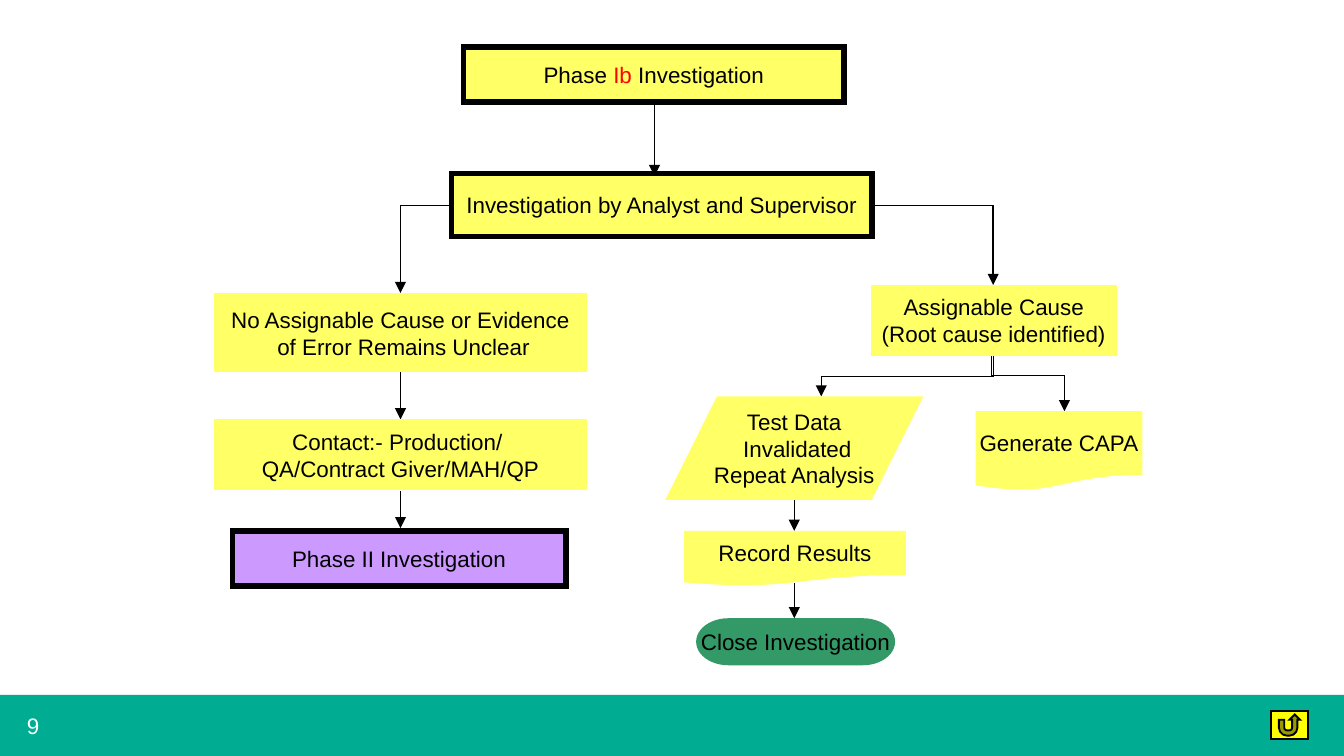
from pptx import Presentation
from pptx.dml.color import RGBColor
from pptx.enum import shapes, text
from pptx.oxml.ns import qn
from pptx.util import Inches, Pt
from lxml import etree

SLIDE_WIDTH = 10
SLIDE_HEIGHT = SLIDE_WIDTH * 9 / 16
FOOTER_TOP = 5.17
FOOTER_HEIGHT = SLIDE_HEIGHT - FOOTER_TOP

YELLOW, PURPLE, GREEN, TEAL = "FFFF66", "CC99FF", "339966", "00AD93"
BLACK, WHITE, RED = "000000", "FFFFFF", "FF0000"
KIND = shapes.MSO_SHAPE
PROCESS, DOCUMENT = KIND.FLOWCHART_PROCESS, KIND.FLOWCHART_DOCUMENT

LEFT_X, TOP_X, TEST_X, CAUSE_X, CAPA_X = 2.98, 4.87, 5.91, 7.39, 7.92
FRAME = {"vertical_anchor": text.MSO_ANCHOR.MIDDLE, "word_wrap": False}
FONT = {"name": "Arial", "size": Pt(12)}

# kind, (left, top, width, height), fill, border width, lines of (text, colour) runs
STEPS = [
    (PROCESS, (3.45, 0.35, 2.83, 0.41), YELLOW, 3,
     [[("Phase ", BLACK), ("Ib", RED), (" Investigation", BLACK)]]),
    (PROCESS, (3.36, 1.29, 3.13, 0.47), YELLOW, 3,
     ["Investigation by Analyst and Supervisor"]),
    (PROCESS, (1.59, 2.18, 2.78, 0.59), YELLOW, 0,
     ["No Assignable Cause or Evidence", " of Error Remains Unclear"]),
    (PROCESS, (1.59, 3.12, 2.78, 0.53), YELLOW, 0,
     ["Contact:- Production/ ", "QA/Contract Giver/MAH/QP"]),
    (PROCESS, (1.73, 3.95, 2.48, 0.41), PURPLE, 3, ["Phase II Investigation"]),
    (PROCESS, (6.48, 2.12, 1.83, 0.53), YELLOW, 0,
     ["Assignable Cause", "(Root cause identified)"]),
    (KIND.FLOWCHART_DATA, (4.95, 2.95, 1.92, 0.77), YELLOW, 0,
     ["Test Data", " Invalidated", "Repeat Analysis"]),
    (DOCUMENT, (7.26, 3.06, 1.24, 0.59), YELLOW, 0, ["Generate CAPA"]),
    (DOCUMENT, (5.09, 3.95, 1.65, 0.41), YELLOW, 0, ["Record Results"]),
    (KIND.FLOWCHART_TERMINATOR, (5.18, 4.6, 1.48, 0.35), GREEN, 0,
     ["Close Investigation"]),
]

# x, top, bottom
STRAIGHT_ARROWS = [
    (TOP_X, 0.78, 1.31), (LEFT_X, 2.77, 3.12), (LEFT_X, 3.65, 3.93),
    (TEST_X, 3.71, 3.95), (TEST_X, 4.34, 4.6),
]


def rgb(value):
    return RGBColor.from_string(value)


def apply(target, values):
    for name, value in values.items():
        setattr(target, name, value)


def write(frame, lines, align, color=BLACK):
    """Fill a text frame; a line is a string or a list of (text, colour) runs."""
    apply(frame, FRAME)
    for index, line in enumerate(lines):
        paragraph = frame.paragraphs[0] if index == 0 else frame.add_paragraph()
        paragraph.alignment = align
        for words, run_color in [(line, color)] if isinstance(line, str) else line:
            run = paragraph.add_run()
            run.text = words
            apply(run.font, FONT)
            run.font.color.rgb = rgb(run_color)


def draw_line(line, width):
    line.color.rgb = rgb(BLACK)
    line.width = Pt(width)
    outline = line._get_or_add_ln()
    etree.SubElement(outline, qn("a:miter"), lim="800000")
    return outline


def add_block(slide, kind, place, fill, border=0):
    block = slide.shapes.add_shape(kind, *map(Inches, place))
    block.shadow.inherit = False
    block.fill.solid()
    block.fill.fore_color.rgb = rgb(fill)
    if border:
        draw_line(block.line, border)
    else:
        block.line.fill.background()
    return block


def add_step(slide, kind, place, fill, border, lines):
    block = add_block(slide, kind, place, fill, border)
    write(block.text_frame, lines, text.PP_ALIGN.CENTER)


def add_arrow(slide, start, end, kind=shapes.MSO_CONNECTOR.STRAIGHT):
    arrow = slide.shapes.add_connector(kind, *map(Inches, (*start, *end)))
    outline = draw_line(arrow.line, 0.75)
    etree.SubElement(outline, qn("a:tailEnd"), type="triangle")
    etree.SubElement(arrow._element.spPr, qn("a:effectLst"))
    return arrow


def add_corner_arrow(slide, start, end):
    """Run sideways, then turn down once."""
    arrow = add_arrow(slide, start, end, shapes.MSO_CONNECTOR.ELBOW)
    arrow._element.spPr.find(qn("a:prstGeom")).set("prst", "bentConnector2")


def add_branch_arrow(slide, start, end, turn):
    """Run down, sideways at the given share of the drop, then down again."""
    arrow = add_arrow(slide, start, end, shapes.MSO_CONNECTOR.ELBOW)
    (x1, y1), (x2, y2) = start, end
    run, drop = abs(x2 - x1), y2 - y1
    apply(arrow, {
        "left": Inches((x1 + x2 - drop) / 2), "top": Inches((y1 + y2 - run) / 2),
        "width": Inches(drop), "height": Inches(run),
    })
    rightward = x2 > x1
    frame = arrow._element.spPr.find(qn("a:xfrm"))
    frame.set("rot", str((270 if rightward else 90) * 60000))
    frame.set("flipH", "1" if rightward else "0")
    guides = arrow._element.spPr.find(qn("a:prstGeom")).get_or_add_avLst()
    etree.SubElement(guides, qn("a:gd"), name="adj1",
                     fmla=f"val {round(turn * 100000)}")


def add_footer(slide):
    add_block(slide, KIND.RECTANGLE,
              (0, FOOTER_TOP, SLIDE_WIDTH, FOOTER_HEIGHT), TEAL)
    number = slide.shapes.add_textbox(
        *map(Inches, (0, FOOTER_TOP, 0.59, FOOTER_HEIGHT)))
    write(number.text_frame, ["9"], text.PP_ALIGN.LEFT, WHITE)
    apply(number.text_frame, {
        "word_wrap": True, "margin_left": Inches(0.2), "margin_right": 0,
        "margin_top": 0, "margin_bottom": 0,
    })
    add_block(slide, KIND.ACTION_BUTTON_RETURN, (9.46, 5.29, 0.27, 0.21), "FFFF00", 1)


def main():
    deck = Presentation()
    apply(deck, {"slide_width": Inches(SLIDE_WIDTH),
                 "slide_height": Inches(SLIDE_HEIGHT)})
    slide = deck.slides.add_slide(deck.slide_layouts[6])
    add_footer(slide)
    for x, top, bottom in STRAIGHT_ARROWS:
        add_arrow(slide, (x, top), (x, bottom))
    add_corner_arrow(slide, (3.35, 1.53), (LEFT_X, 2.18))
    add_corner_arrow(slide, (6.51, 1.53), (CAUSE_X, 2.12))
    add_branch_arrow(slide, (CAUSE_X, 2.65), (6.11, 2.95), 0.5)
    add_branch_arrow(slide, (7.38, 2.65), (CAPA_X, 3.06), 0.35)
    for step in STEPS:
        add_step(slide, *step)
    deck.save("out.pptx")


if __name__ == "__main__":
    main()
